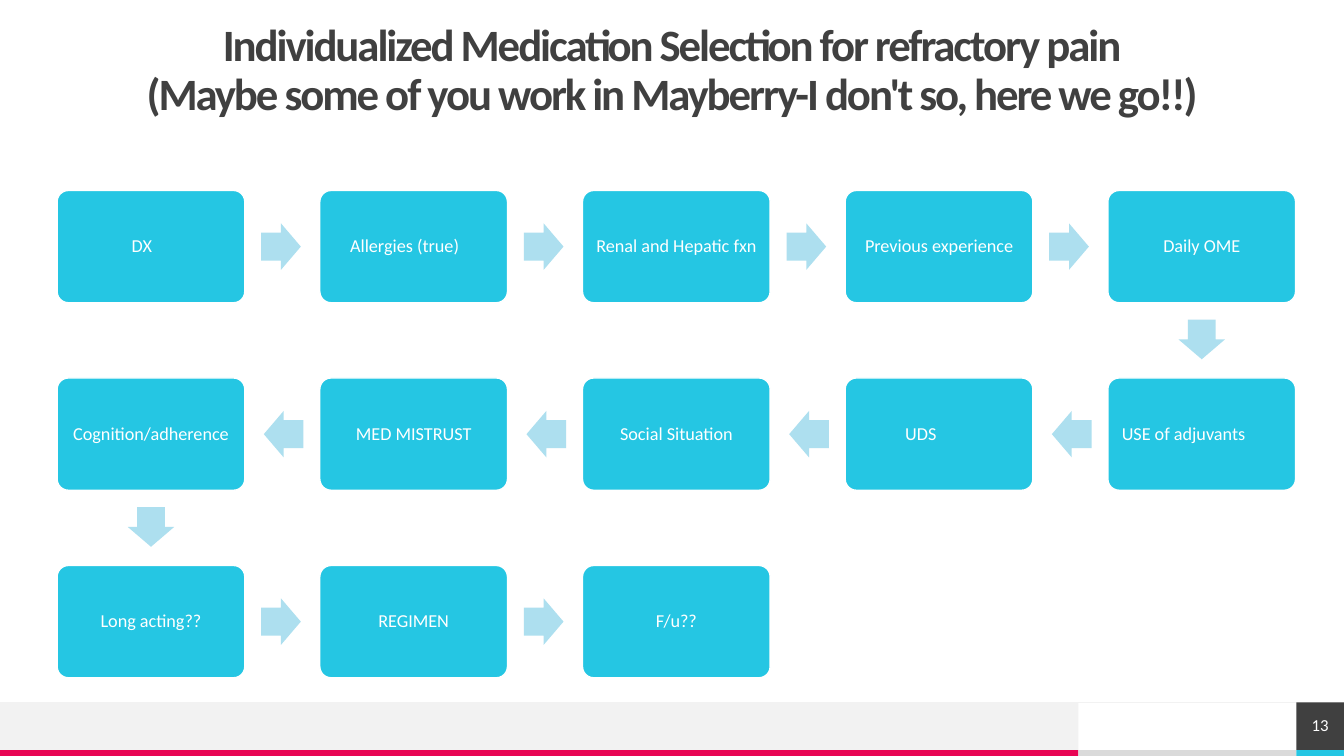
from dataclasses import dataclass
from math import atan2, degrees

from lxml.etree import SubElement
from pptx import Presentation
from pptx.dml.color import RGBColor
from pptx.enum.shapes import MSO_CONNECTOR, MSO_SHAPE
from pptx.enum.text import MSO_ANCHOR, PP_ALIGN
from pptx.oxml.ns import qn
from pptx.util import Cm, Pt


@dataclass(frozen=True)
class Theme:
    font: str = "Calibri"
    dark: str = "404040"
    white: str = "FFFFFF"
    pale: str = "F2F2F2"
    grey: str = "DADADA"
    pink: str = "E80554"
    cyan: str = "25C6E3"
    arrow: str = "ADDFEF"
    title: int = 32
    step: int = 13
    number: int = 12


THEME = Theme()
WIDTH, HEIGHT = 33.87, 19.05
TITLE = ("Individualized Medication Selection for refractory pain\v"
         "(Maybe some of you work in Mayberry-I don't so, here we go!!)")
COLS = 5
STEPS = ["DX", "Allergies (true)", "Renal and Hepatic fxn",
         "Previous experience", "Daily OME",
         "USE of adjuvants", "UDS", "Social Situation",
         "MED MISTRUST", "Cognition/adherence",
         "Long acting??", "REGIMEN", "F/u??"]
# Extra right margin, in ems, for labels set left of centre
SHIFTS = {"DX": 1, "Allergies (true)": 1, "USE of adjuvants": 2, "UDS": 2}


def add_block(slide, kind, box, fill):
    shape = slide.shapes.add_shape(kind, *map(Cm, box))
    shape.shadow.inherit = False
    shape.fill.solid()
    shape.fill.fore_color.rgb = RGBColor.from_string(fill)
    shape.line.fill.background()
    return shape


def set_text(shape, text, size, color, inset=0.0, bold=False):
    frame = shape.text_frame
    frame.text = text
    frame.word_wrap = True
    frame.vertical_anchor = MSO_ANCHOR.MIDDLE
    frame.margin_left = frame.margin_right = Cm(inset)
    frame.margin_top = frame.margin_bottom = Cm(inset)
    para = frame.paragraphs[0]
    para.alignment = PP_ALIGN.CENTER
    para.line_spacing = 0.9
    for run in para.runs:
        run.font.name = THEME.font
        run.font.size = Pt(size)
        run.font.bold = bold
        run.font.color.rgb = RGBColor.from_string(color)


def add_title(slide, box):
    title = slide.shapes.title
    title.left, title.top, title.width, title.height = map(Cm, box)
    set_text(title, TITLE, THEME.title, THEME.dark, bold=True)
    for run in title.text_frame.paragraphs[0].runs:
        run.font._element.set("spc", "-150")


def add_footer(slide, box):
    """Draw the bottom band, its coloured strip and the page number."""
    left, top, width, height = box
    strip = 0.15
    tile = height - strip
    low = top + tile
    split, page = left + 27.18, left + width - tile
    right = left + width
    for x, y, end, tall, color in [
            (left, top, split, tile, THEME.pale),
            (left, low, split, strip, THEME.pink),
            (split, low, page, strip, THEME.grey),
            (page, low, right, strip, THEME.cyan)]:
        add_block(slide, MSO_SHAPE.RECTANGLE, (x, y, end - x, tall), color)
    rule = slide.shapes.add_connector(
        MSO_CONNECTOR.STRAIGHT, Cm(right), Cm(top), Cm(left), Cm(top))
    rule.line.color.rgb = RGBColor.from_string(THEME.pale)
    rule.line.width = Pt(0.5)
    SubElement(rule._element.spPr, qn("a:effectLst"))
    number = add_block(slide, MSO_SHAPE.RECTANGLE,
                       (page, top, tile, tile), THEME.dark)
    set_text(number, "13", THEME.number, THEME.white)


def add_step(slide, label, mid, size):
    (x, y), (wide, tall) = mid, size
    card = add_block(slide, MSO_SHAPE.ROUNDED_RECTANGLE,
                     (x - wide / 2, y - tall / 2, wide, tall), THEME.cyan)
    card.adjustments[0] = 0.1
    card.line.color.rgb = RGBColor.from_string(THEME.white)
    card.line.width = Pt(1)
    set_text(card, label, THEME.step, THEME.white, inset=0.2)
    card.text_frame.margin_right += Pt(THEME.step) * SHIFTS.get(label, 0)


def add_arrow(slide, start, end):
    """Place an arrow just short of halfway between two step centres."""
    (x1, y1), (x2, y2) = start, end
    wide, tall, part = 1.0, 1.17, 0.495
    x, y = x1 + (x2 - x1) * part, y1 + (y2 - y1) * part
    arrow = add_block(slide, MSO_SHAPE.RIGHT_ARROW,
                      (x - wide / 2, y - tall / 2, wide, tall), THEME.arrow)
    arrow.adjustments[0] = 0.6
    arrow.adjustments[1] = 0.5
    arrow.rotation = degrees(atan2(y2 - y1, x2 - x1))


def add_flow(slide, box):
    """Lay the steps out as a snake: odd rows run right to left."""
    left, top, width, height = box
    wide, tall = 4.73, 2.83
    rows = -(-len(STEPS) // COLS)
    gap_x = (width - wide) / (COLS - 1)
    gap_y = (height - tall) / (rows - 1)
    mids = []
    for index in range(len(STEPS)):
        row, col = divmod(index, COLS)
        if row % 2:
            col = COLS - 1 - col
        mids.append((left + wide / 2 + col * gap_x,
                     top + tall / 2 + row * gap_y))
    for label, mid in zip(STEPS, mids):
        add_step(slide, label, mid, (wide, tall))
    for start, end in zip(mids, mids[1:]):
        add_arrow(slide, start, end)


def main():
    deck = Presentation()
    deck.slide_width, deck.slide_height = Cm(WIDTH), Cm(HEIGHT)
    slide = deck.slides.add_slide(deck.slide_layouts[5])
    add_footer(slide, (0, 17.7, WIDTH, 1.35))
    add_title(slide, (1.2, 1.2, 31.47, 1.2))
    add_flow(slide, (1.44, 4.8, 31.21, 12.28))
    deck.save("out.pptx")


if __name__ == "__main__":
    main()
